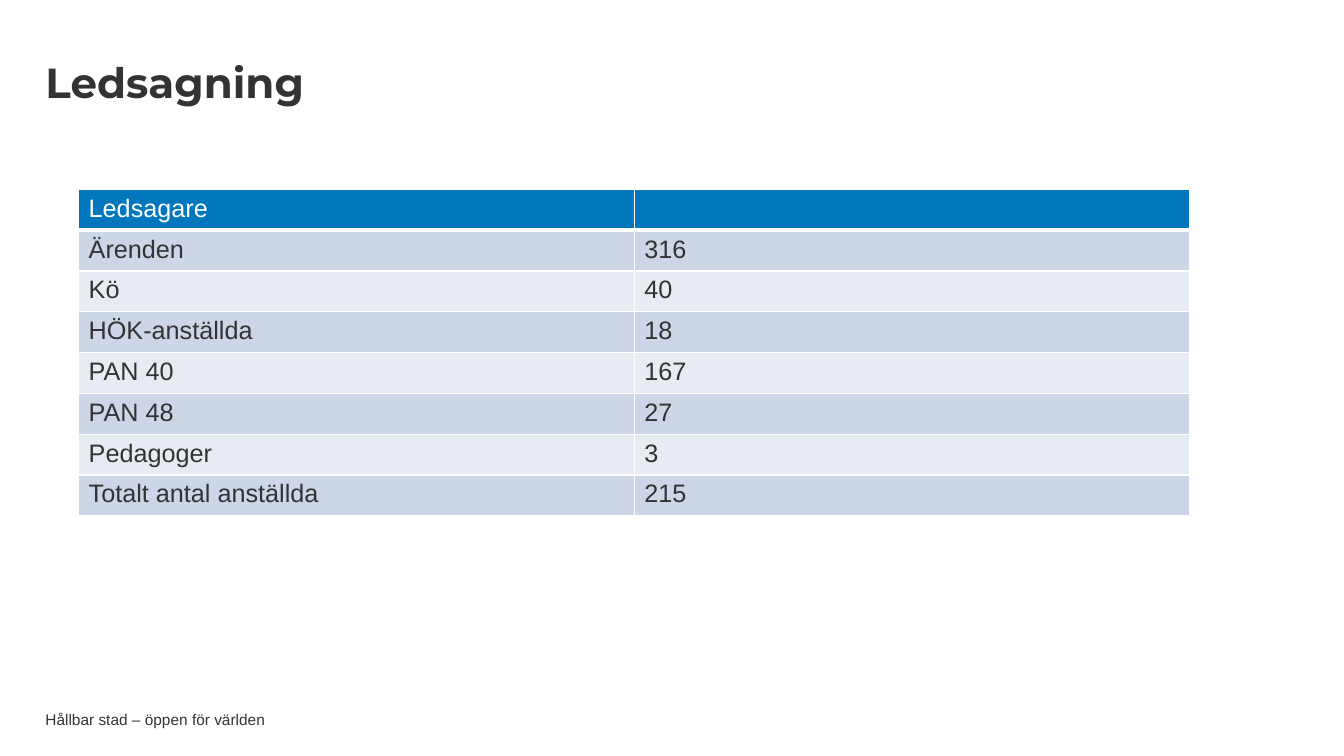
from lxml.etree import SubElement
from pptx import Presentation
from pptx.dml.color import RGBColor
from pptx.enum.text import MSO_ANCHOR
from pptx.oxml.ns import qn
from pptx.util import Pt

PX = 9144  # EMU; 100 px to the inch
SLIDE_SIZE = (1333, 750)
TITLE_BOX = (45, 44, 1003, 81)
TABLE_BOX = (78, 188, 1102, 324)
FOOTER_BOX = (45, 706, 945, 16)

DARK, WHITE, HEADER_BLUE = "333333", "FFFFFF", "0077BC"
BANDS = ("CCD6E7", "E7ECF3")
TITLE_FONT = {"name": "Montserrat", "size": Pt(30), "bold": True}
TABLE_FONT = {"name": "Arial", "size": Pt(18), "bold": False}
FOOTER_FONT = {"name": "Arial", "size": Pt(11), "bold": False}

ROWS = [
    ("Ledsagare", ""),
    ("Ärenden", "316"),
    ("Kö", "40"),
    ("HÖK-anställda", "18"),
    ("PAN 40", "167"),
    ("PAN 48", "27"),
    ("Pedagoger", "3"),
    ("Totalt antal anställda", "215"),
]


def rgb(value):
    return RGBColor.from_string(value)


def emu(box):
    return [length * PX for length in box]


def set_attributes(target, values):
    for name, value in values.items():
        setattr(target, name, value)


def write(frame, text, font, color):
    """Put one formatted paragraph in a text frame and return it."""
    para = frame.paragraphs[0]
    if text:
        para.add_run().text = text
    set_attributes(para.font, font)
    para.font.color.rgb = rgb(color)
    for span in para.runs:
        set_attributes(span.font, font)
        span.font.color.rgb = rgb(color)
    return para


def set_frame(frame, inset):
    """Centre the text vertically, with the given inset above and below."""
    set_attributes(frame, {
        "word_wrap": True, "vertical_anchor": MSO_ANCHOR.MIDDLE,
        "margin_left": 0, "margin_right": 0,
        "margin_top": inset * PX, "margin_bottom": inset * PX,
    })


def add_title(page, box):
    title = page.shapes.title
    set_attributes(title, dict(zip(("left", "top", "width", "height"), emu(box))))
    set_frame(title.text_frame, 5)
    para = write(title.text_frame, "Ledsagning", TITLE_FONT, DARK)
    set_attributes(para, {"line_spacing": 0.9, "alignment": 1})


def add_footer(page, box):
    frame = page.shapes.add_textbox(*emu(box)).text_frame
    set_frame(frame, 0)
    write(frame, "Hållbar stad – öppen för världen", FOOTER_FONT, DARK)


def set_borders(cell, widths):
    """Draw white borders; widths maps a side (L, R, T, B) to points."""
    properties = cell._tc.get_or_add_tcPr()
    for side, width in widths.items():
        line = SubElement(properties, qn(f"a:ln{side}"), w=str(Pt(width)))
        fill = SubElement(line, qn("a:solidFill"))
        SubElement(fill, qn("a:srgbClr"), val=WHITE)


def add_staff_table(page, box):
    table = page.shapes.add_table(len(ROWS), len(ROWS[0]), *emu(box)).table
    for row_index, row in enumerate(ROWS):
        is_header = row_index == 0
        fill = HEADER_BLUE if is_header else BANDS[(row_index - 1) % 2]
        widths = {"L": 1, "R": 1, "T": 3 if row_index == 1 else 1,
                  "B": 3 if is_header else 1}
        for column_index, text in enumerate(row):
            cell = table.cell(row_index, column_index)
            set_borders(cell, widths)
            cell.fill.solid()
            cell.fill.fore_color.rgb = rgb(fill)
            write(cell.text_frame, text, TABLE_FONT, WHITE if is_header else DARK)


def main():
    deck = Presentation()
    deck.slide_width, deck.slide_height = emu(SLIDE_SIZE)
    page = deck.slides.add_slide(deck.slide_layouts[5])
    add_footer(page, FOOTER_BOX)
    add_title(page, TITLE_BOX)
    add_staff_table(page, TABLE_BOX)
    deck.save("out.pptx")


if __name__ == "__main__":
    main()
